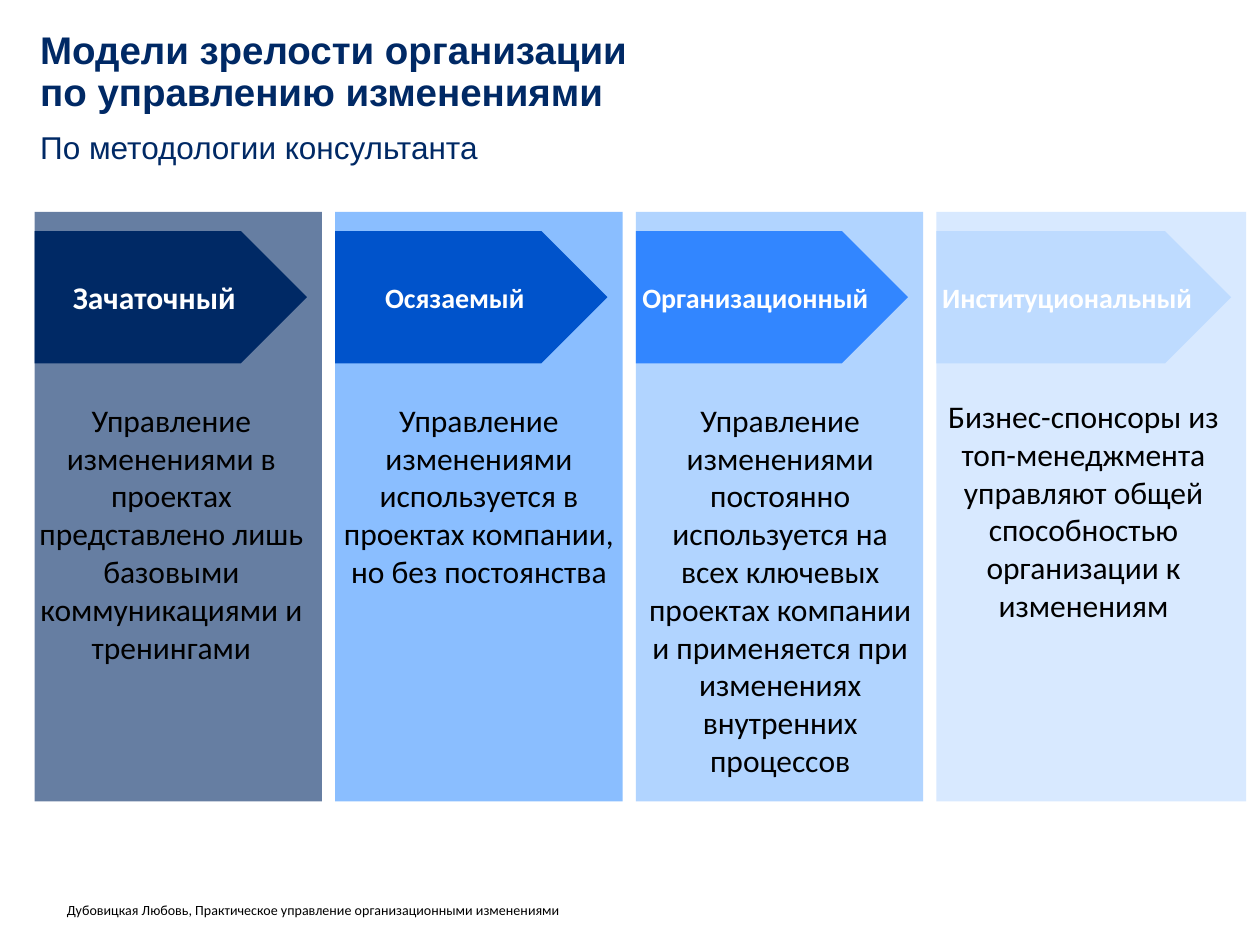
"""Build a slide with four maturity levels of organizational change management."""
from lxml.etree import SubElement
from pptx import Presentation
from pptx.dml.color import RGBColor
from pptx.enum.shapes import MSO_SHAPE as Shape
from pptx.enum.text import MSO_ANCHOR as Anchor, PP_ALIGN as Align
from pptx.oxml.ns import qn
from pptx.util import Pt

THEME = {
    "navy": "002965", "black": "000000", "white": "FFFFFF",
    "title": 22, "body": 18, "label": 16, "footer": 8,
    "heading_font": "Arial", "text_font": "Calibri",
}


def add_block(kind, left, top, width, height, fill, alpha=None):
    sp = s.shapes.add_shape(kind, Pt(left), Pt(top), Pt(width), Pt(height))
    sp.shadow.inherit = False
    sp.line.fill.background()
    sp.fill.solid()
    sp.fill.fore_color.rgb = RGBColor.from_string(fill)
    if alpha:
        color = sp.fill._xPr.find(qn("a:solidFill"))[0]
        SubElement(color, qn("a:alpha"), val=str(alpha * 1000))
    return sp


def write(sp, text, size, color, font="text_font", bold=False, wrap=True,
          anchor=Anchor.TOP, top=0, **paragraph):
    tf = sp.text_frame
    frame = {"margin_left": 0, "margin_top": Pt(top), "margin_right": 0,
             "margin_bottom": 0, "word_wrap": wrap, "vertical_anchor": anchor}
    for name, value in frame.items():
        setattr(tf, name, value)
    p = tf.paragraphs[0]
    p.text = text
    for name, value in paragraph.items():
        setattr(p, name, value)
    for r in p.runs:
        for name, value in {"name": THEME[font], "size": Pt(THEME[size]), "bold": bold}.items():
            setattr(r.font, name, value)
        r.font.color.rgb = RGBColor.from_string(THEME[color])


prs = Presentation()
prs.slide_width, prs.slide_height = Pt(720), Pt(540)
s = prs.slides.add_slide(prs.slide_layouts[6])

title = s.shapes.add_textbox(Pt(23), Pt(9.4), Pt(680.4), Pt(56.9))
write(title, "Модели зрелости организации\vпо управлению изменениями", "title", "navy",
      "heading_font", bold=True, top=8.6, line_spacing=0.9)
subtitle = s.shapes.add_textbox(Pt(23), Pt(73.4), Pt(680.4), Pt(22.3))
write(subtitle, "По методологии консультанта", "body", "navy", "heading_font", space_after=Pt(3))

levels = [
    ("Зачаточный", "body", "002965", "002965", 164.2, 0.4, 229,
     "Управление изменениями в проектах представлено лишь базовыми коммуникациями и тренингами"),
    ("Осязаемый", "label", "0053CB", "3D94FF", 164.2, 4.4, 229,
     "Управление изменениями используется в проектах компании, но без постоянства"),
    ("Организационный", "label", "3286FF", "7EB8FF", 164.2, 4.8, 229,
     "Управление изменениями постоянно используется на всех ключевых проектах компании "
     "и применяется при изменениях внутренних процессов"),
    ("Институциональный", "label", "BEDBFF", "BEDBFF", 177.1, 6.4, 226.8,
     "Бизнес-спонсоры из топ-менеджмента управляют общей способностью организации к изменениям"),
]
for i, (name, size, arrow_fill, column_fill, width, inset, top, text) in enumerate(levels):
    left = 19.8 + 171.75 * i
    add_block(Shape.RECTANGLE, left, 121, width, 337, column_fill, alpha=60)
    arrow = add_block(Shape.PENTAGON, left, 132, width - 8.6, 75.6, arrow_fill)
    write(arrow, name, size, "white", bold=True, anchor=Anchor.MIDDLE, alignment=Align.CENTER)
    description = s.shapes.add_textbox(Pt(left + inset), Pt(top), Pt(155.5), Pt(229))
    write(description, text, "body", "black", alignment=Align.CENTER, space_after=Pt(3))

footer = s.shapes.add_textbox(Pt(38.2), Pt(512.6), Pt(461.5), Pt(12.2))
write(footer, "Дубовицкая Любовь, Практическое управление организационными изменениями",
      "footer", "black", wrap=False, anchor=Anchor.BOTTOM, alignment=Align.LEFT)

prs.save("out.pptx")
